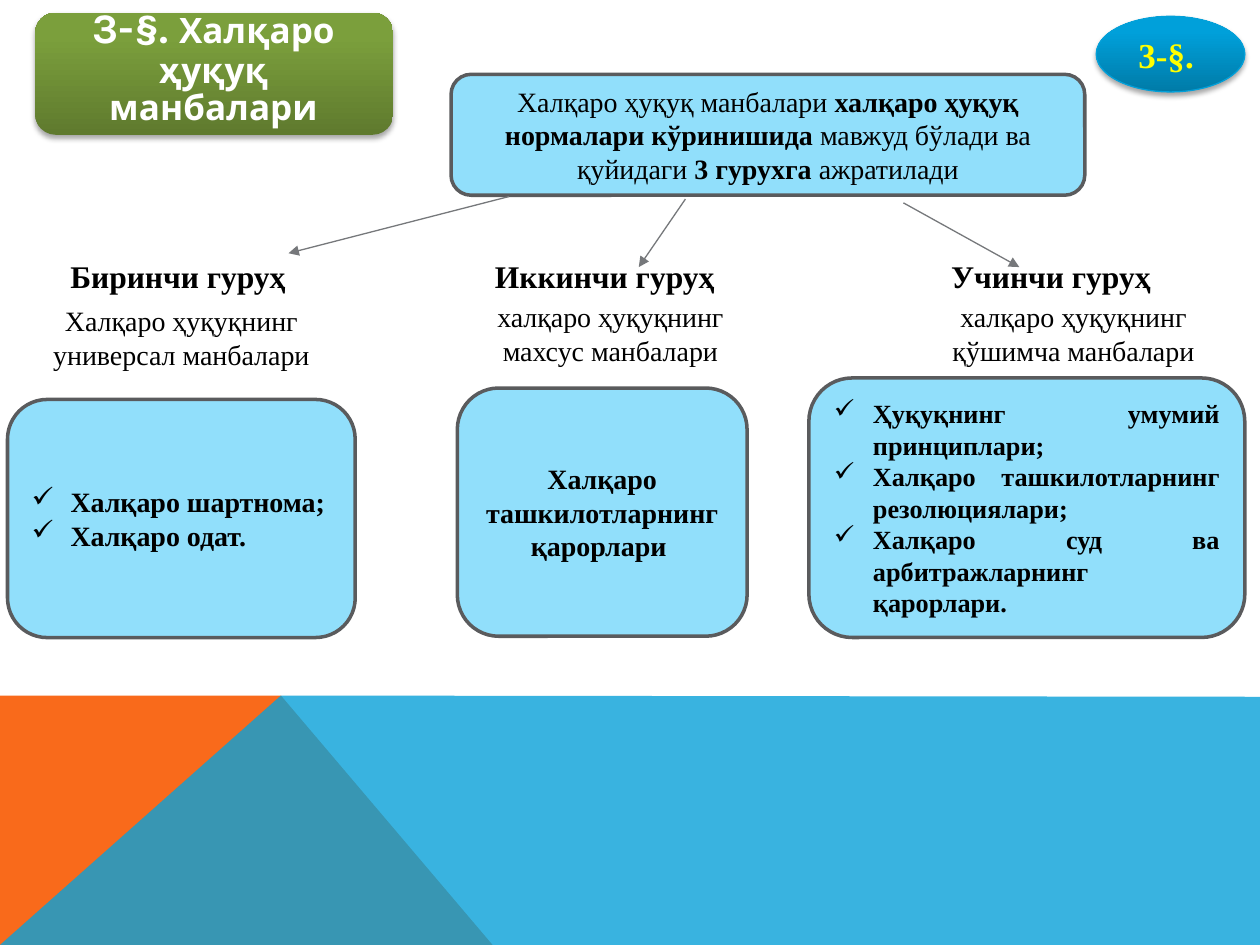
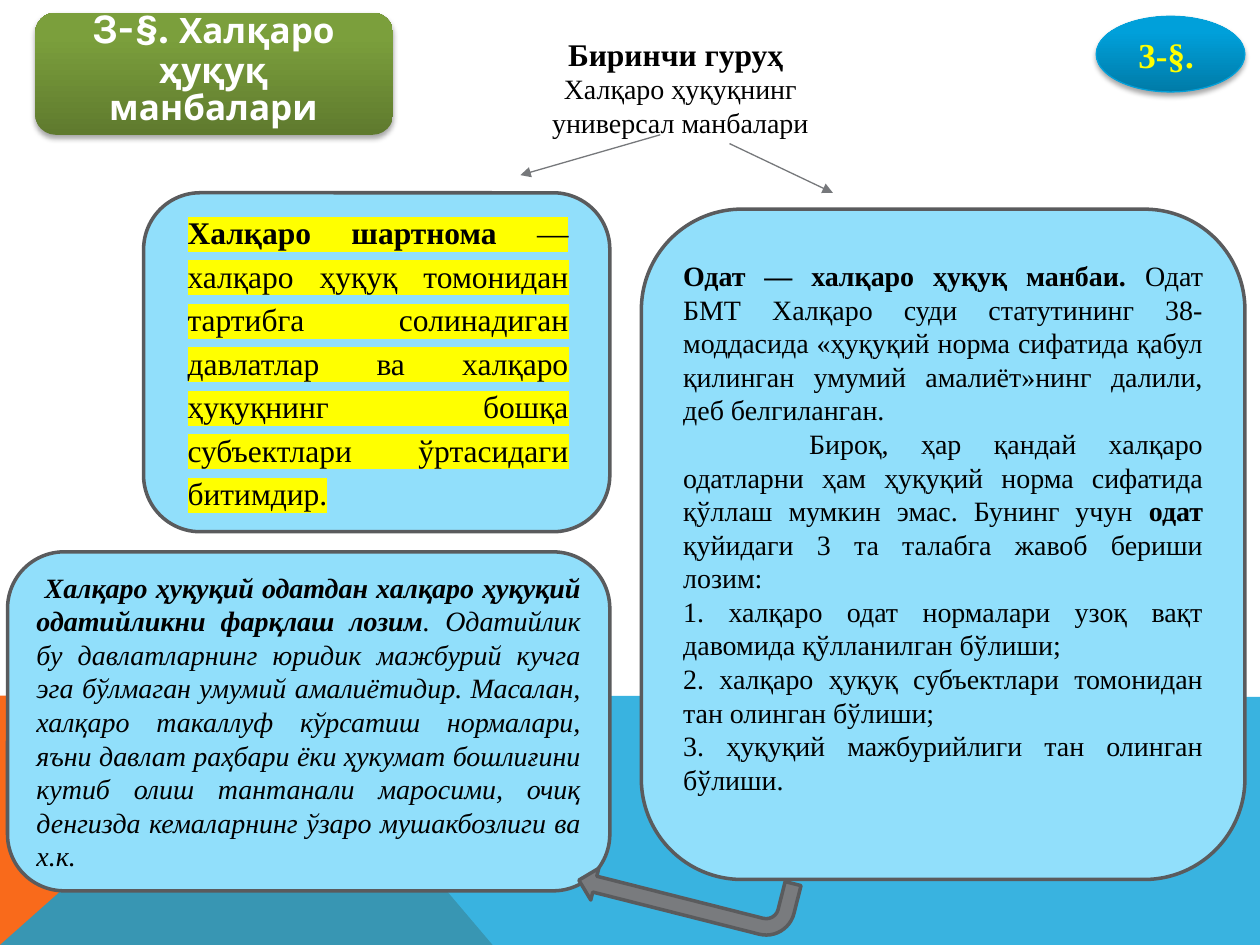
"""Builds two slides on the sources of international law."""
import pptx
import pptx.util
import pptx.dml.color
import pptx.enum.shapes
import pptx.enum.text
import pptx.oxml
import pptx.oxml.ns

Inches = pptx.util.Inches
Pt = pptx.util.Pt
RGBColor = pptx.dml.color.RGBColor
Shape = pptx.enum.shapes.MSO_SHAPE
Align = pptx.enum.text.PP_ALIGN
Anchor = pptx.enum.text.MSO_ANCHOR

BLACK = RGBColor(0x00, 0x00, 0x00)
WHITE = RGBColor(0xFF, 0xFF, 0xFF)
YELLOW = RGBColor(0xFF, 0xFF, 0x00)
ORANGE = RGBColor(0xF9, 0x6A, 0x1B)
BLUE = RGBColor(0x08, 0xA1, 0xD9)
BADGE_EDGE = RGBColor(0x03, 0xA0, 0xD9)
BADGE_DARK = RGBColor(0x00, 0x7B, 0xA8)
BADGE_LIGHT = RGBColor(0x00, 0xA0, 0xDA)
TITLE_DARK = RGBColor(0x5F, 0x7A, 0x2E)
TITLE_LIGHT = RGBColor(0x7B, 0x9F, 0x3C)
PANEL = RGBColor(0x91, 0xDF, 0xFB)
PANEL_EDGE = RGBColor(0x5A, 0x5B, 0x5D)
ARROW = RGBColor(0x76, 0x78, 0x7B)
BENT_ARROW = RGBColor(0x79, 0x7B, 0x7E)

SERIF = "Times New Roman"
TITLE_FONT = "Karla"
BOLD = {"bold": True}
CENTER = {"alignment": Align.CENTER}
JUSTIFY = {"alignment": Align.JUSTIFY}
FIRST_GROUP = "Биринчи гуруҳ"
FIRST_SOURCES = "Халқаро ҳуқуқнинг универсал манбалари"


def element(tag, inner="", attributes=""):
    """Return a drawing element made from its tag, content and attributes."""
    space = pptx.oxml.ns.nsdecls("a")
    return pptx.oxml.parse_xml(f"<a:{tag} {space} {attributes}>{inner}</a:{tag}>")


class Builder:
    """Holds the deck style and the current slide, and draws elements on it."""

    def __init__(self):
        self.deck = pptx.Presentation()
        self.deck.slide_width = Inches(10)
        self.deck.slide_height = Inches(7.5)
        self.page = None

    def start_page(self):
        """Add a slide with the bands, the title plate and the section badge."""
        self.page = self.deck.slides.add_slide(self.deck.slide_layouts[6])
        self.band(ORANGE, [(0, 7.5), (0, 5.52), (2.23, 5.52), (3.91, 7.5)])
        self.band(BLUE, [(0, 7.5), (2.23, 5.52), (10, 5.53), (10, 7.5)], 80)
        badge = self.shape(Shape.OVAL, (8.7, 0.13, 1.18, 0.6), None, BADGE_EDGE, 0.75)
        self.glossy(badge, BADGE_DARK, BADGE_LIGHT)
        self.put_text(badge, [[("3-§. ", BOLD)]], 20, CENTER, color=YELLOW)
        plate = self.shape(Shape.ROUNDED_RECTANGLE, (0.28, 0.1, 2.84, 0.97))
        self.glossy(plate, TITLE_DARK, TITLE_LIGHT)
        title = [[("3-§. ", {"size": Pt(24)}), ("Халқаро ҳуқуқ манбалари", {})]]
        box = self.text((0.36, 0.1, 2.67, 0.88), title, 20,
                        {**CENTER, "line_spacing": 0.9},
                        color=WHITE, name=TITLE_FONT, bold=True)
        sides = ("margin_left", "margin_right", "margin_top", "margin_bottom")
        self.apply(box.text_frame, dict.fromkeys(sides, Inches(0.15)))
        box.text_frame.vertical_anchor = Anchor.MIDDLE

    def apply(self, target, values):
        """Set each named attribute of the target."""
        for name, value in values.items():
            setattr(target, name, value)

    def band(self, color, points, opacity=100):
        """Draw a closed outline at the foot of the slide."""
        corners = [(Inches(x), Inches(y)) for x, y in points]
        outline = self.page.shapes.build_freeform(*corners[0])
        outline.add_line_segments(corners[1:], close=True)
        band = outline.convert_to_shape()
        band.shadow.inherit = False
        band.fill.solid()
        band.fill.fore_color.rgb = color
        band.line.fill.background()
        if opacity < 100:
            tint = band._element.spPr.find(".//" + pptx.oxml.ns.qn("a:srgbClr"))
            tint.append(element("alpha", attributes=f'val="{opacity * 1000}"'))

    def shape(self, kind, place, fill=None, edge=None, width=2):
        """Draw a preset shape."""
        shape = self.page.shapes.add_shape(kind, *map(Inches, place))
        shape.shadow.inherit = False
        if fill is not None:
            shape.fill.solid()
            shape.fill.fore_color.rgb = fill
        if edge is None:
            shape.line.fill.background()
        else:
            shape.line.color.rgb = edge
            shape.line.width = Pt(width)
        return shape

    def glossy(self, shape, dark, light):
        """Give a shape an upward gradient and a soft shadow."""
        shape.fill.gradient()
        shape.fill.gradient_angle = 90
        for stop, color, position in zip(shape.fill.gradient_stops, (dark, light), (0, 0.8)):
            stop.color.rgb = color
            stop.position = position
        effects = shape._element.spPr.find(pptx.oxml.ns.qn("a:effectLst"))
        tint = '<a:srgbClr val="000000"><a:alpha val="35000"/></a:srgbClr>'
        effects.append(element(
            "outerShdw", tint,
            f'blurRad="{Pt(3.1)}" dist="{Pt(1.8)}" dir="5400000" rotWithShape="0"'))

    def put_text(self, shape, paragraphs, size, layout, color=BLACK, bullet=False,
                 highlight=None, **font):
        """Fill a shape with paragraphs, each a list of (text, format) spans."""
        frame = shape.text_frame
        frame.word_wrap = True
        base = {"size": Pt(size), "name": SERIF, **font}
        for index, spans in enumerate(paragraphs):
            para = frame.add_paragraph() if index else frame.paragraphs[0]
            self.apply(para, layout)
            if bullet:
                self.check_mark(para)
            for text, values in spans:
                span = para.add_run()
                span.text = text
                self.apply(span.font, {**base, **values})
                span.font.color.rgb = color
                if highlight is not None:
                    latin = span.font._element.find(pptx.oxml.ns.qn("a:latin"))
                    latin.addprevious(element("highlight", f'<a:srgbClr val="{highlight}"/>'))

    def indent(self, para, left, first):
        """Set the left and first-line indents of a paragraph."""
        settings = para._p.get_or_add_pPr()
        settings.set("marL", str(Inches(left)))
        settings.set("indent", str(Inches(first)))
        return settings

    def check_mark(self, para):
        """Put a check mark before a paragraph."""
        self.indent(para, 0.31, -0.31).append(element("buChar", attributes='char="✓"'))

    def text(self, place, paragraphs, size, layout, **font):
        """Draw a text box."""
        box = self.page.shapes.add_textbox(*map(Inches, place))
        self.put_text(box, paragraphs, size, layout, **font)
        return box

    def panel(self, place, paragraphs=(), size=16, layout=JUSTIFY, **font):
        """Draw a light blue rounded panel."""
        panel = self.shape(Shape.ROUNDED_RECTANGLE, place, PANEL, PANEL_EDGE)
        self.put_text(panel, paragraphs, size, layout, **font)
        return panel

    def heading(self, place, name):
        """Draw the one-line name of a group."""
        box = self.text((*place, 0.4), [[(name, BOLD)]], 18, {"alignment": Align.LEFT})
        box.text_frame.word_wrap = False

    def caption(self, place, text):
        """Draw the centred description of a group."""
        self.text((*place, 0.64), [[(text, {})]], 16, CENTER)

    def arrow(self, start, end):
        """Draw a thin arrow between two points."""
        connector = self.page.shapes.add_connector(
            pptx.enum.shapes.MSO_CONNECTOR.STRAIGHT, *map(Inches, (*start, *end)))
        connector.line.color.rgb = ARROW
        connector.line.width = Pt(0.75)
        outline = connector._element.spPr.find(pptx.oxml.ns.qn("a:ln"))
        outline.append(element("tailEnd", attributes='type="triangle"'))
        connector._element.spPr.append(element("effectLst"))


def build_groups(builder):
    """Draw the slide with the three groups of sources."""
    builder.start_page()
    builder.panel((3.58, 0.59, 5.03, 0.96), [[
        ("Халқаро ҳуқуқ манбалари ", {}),
        ("халқаро ҳуқуқ нормалари кўринишида ", BOLD),
        ("мавжуд бўлади ва қуйидаги ", {}),
        ("3 гурухга ", BOLD),
        ("ажратилади", {})]], layout=CENTER)
    groups = [
        (FIRST_GROUP, (0.46, 1.99, 1.99), FIRST_SOURCES, (0.24, 2.36, 2.4),
         (4.04, 1.56), (2.29, 2.01)),
        ("Иккинчи гуруҳ", (3.83, 1.99, 2.02), "халқаро ҳуқуқнинг махсус манбалари",
         (3.78, 2.33, 2.13), (5.44, 1.58), (5.07, 2.12)),
        ("Учинчи гуруҳ", (7.45, 1.99, 1.86), "халқаро ҳуқуқнинг қўшимча манбалари",
         (7.16, 2.33, 2.72), (7.17, 1.61), (8.09, 2.12)),
    ]
    for name, name_place, sources, sources_place, start, end in groups:
        builder.heading(name_place, name)
        builder.caption(sources_place, sources)
        builder.arrow(start, end)
    panels = [
        ((0.06, 3.17, 2.76, 1.89), 16, JUSTIFY, True,
         ["Халқаро шартнома;", "Халқаро одат. "]),
        ((3.63, 3.08, 2.3, 1.97), 16, CENTER, False,
         ["Халқаро", "ташкилотларнинг қарорлари "]),
        ((6.42, 3, 3.46, 2.06), 15, JUSTIFY, True,
         ["Ҳуқуқнинг умумий принциплари; ",
          "Халқаро ташкилотларнинг резолюциялари; ",
          "Халқаро суд ва арбитражларнинг қарорлари."]),
    ]
    for place, size, layout, bullet, lines in panels:
        builder.panel(place, [[(line, BOLD)] for line in lines], size, layout, bullet=bullet)


def build_first_group(builder):
    """Draw the slide on treaties and customs."""
    builder.start_page()
    builder.heading((4.41, 0.23, 1.99), FIRST_GROUP)
    builder.caption((4.2, 0.52, 2.4), FIRST_SOURCES)
    builder.arrow((5.24, 1.07), (4.13, 1.39))
    builder.arrow((5.79, 1.14), (6.61, 1.53))
    builder.panel((1.14, 1.53, 3.7, 2.69))
    builder.text((1.39, 1.6, 3.22, 2.54), [[
        ("Халқаро шартнома", BOLD),
        (" — халқаро ҳуқуқ томонидан тартибга солинадиган давлатлар ва халқаро "
         "ҳуқуқнинг бошқа субъектлари ўртасидаги битимдир.", {})]],
        18, {**JUSTIFY, "line_spacing": 1.15}, highlight=YELLOW)
    custom = builder.panel((5.09, 1.66, 4.79, 5.32), [
        [("Одат — халқаро ҳуқуқ манбаи. ", BOLD),
         ("Одат БМТ Халқаро суди статутининг 38-моддасида «ҳуқуқий норма сифатида қабул "
          "қилинган умумий амалиёт»нинг далили, деб белгиланган.", {})],
        [("Бироқ, ҳар қандай халқаро одатларни ҳам ҳуқуқий норма сифатида қўллаш "
          "мумкин эмас. Бунинг учун ", {}),
         ("одат ", BOLD),
         ("қуйидаги 3 та талабга жавоб бериши лозим: ", {})],
        [("1. халқаро одат нормалари узоқ вақт давомида қўлланилган бўлиши; ", {})],
        [("2. халқаро ҳуқуқ субъектлари томонидан тан олинган бўлиши; ", {})],
        [("3. ҳуқуқий мажбурийлиги тан олинган бўлиши. ", {})]])
    builder.indent(custom.text_frame.paragraphs[1], 0, 1)
    custom.text_frame.margin_bottom = Inches(0.32)
    builder.panel((0.06, 4.38, 4.78, 2.69), [[
        (" Халқаро ҳуқуқий одатдан халқаро ҳуқуқий одатийликни фарқлаш лозим", BOLD),
        (". Одатийлик бу давлатларнинг юридик мажбурий кучга эга бўлмаган умумий "
         "амалиётидир. Масалан, халқаро такаллуф кўрсатиш нормалари, яъни давлат раҳбари "
         "ёки ҳукумат бошлиғини кутиб олиш тантанали маросими, очиқ денгизда "
         "кемаларнинг ўзаро мушакбозлиги ва х.к. ", {})]], italic=True)
    bent = builder.shape(Shape.BENT_ARROW, (4.6, 6.81, 1.72, 0.52), BENT_ARROW, PANEL_EDGE)
    bent.rotation = 194.2


def main():
    """Build and save the deck."""
    builder = Builder()
    build_groups(builder)
    build_first_group(builder)
    builder.deck.save("out.pptx")


if __name__ == "__main__":
    main()
